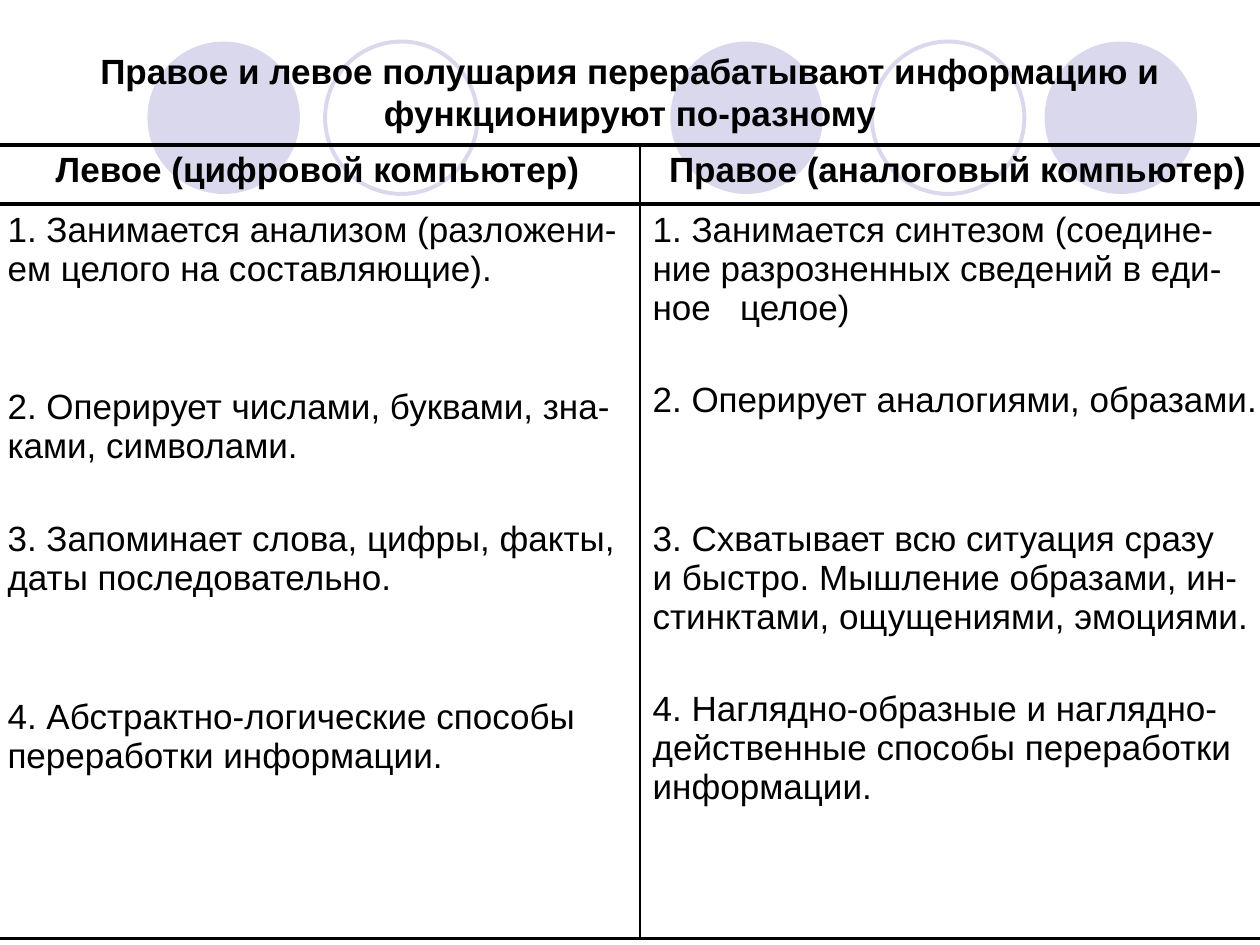
from dataclasses import dataclass

from lxml.etree import SubElement
from pptx import Presentation
from pptx.dml.color import RGBColor
from pptx.enum.shapes import MSO_SHAPE
from pptx.enum.text import MSO_ANCHOR, PP_ALIGN
from pptx.oxml.ns import qn
from pptx.util import Inches, Pt


@dataclass(frozen=True)
class Theme:
    font: str = "Arial"
    text_size: float = 20
    ink: str = "000000"
    circle: str = "D9D8EC"
    circle_line: float = 2.25
    thick_rule: float = 2.25
    thin_rule: float = 1
    paragraph_gap: float = 4
    skipped_line: float = 26.5


THEME = Theme()

TITLE = "Правое и левое полушария перерабатывают информацию и функционируют по-разному"
HEADINGS = ["Левое (цифровой компьютер)", "Правое (аналоговый компьютер)"]
LEFT_POINTS = [
    (0, "1. Занимается анализом (разложени-ем целого на составляющие)."),
    (2, "2. Оперирует числами, буквами, зна-ками, символами."),
    (1, "3. Запоминает слова, цифры, факты, даты последовательно."),
    (2, "4. Абстрактно-логические способы переработки информации."),
]
RIGHT_POINTS = [
    (0, "1. Занимается синтезом (соедине-ние разрозненных сведений в еди-ное   целое)"),
    (1, "2. Оперирует аналогиями, образами."),
    (2, "3. Схватывает всю ситуация сразу\nи быстро. Мышление образами, ин-стинктами, ощущениями, эмоциями."),
    (1, "4. Наглядно-образные и наглядно- действенные способы переработки информации."),
]
CIRCLES = [(0, True), (1.41, False), (4.15, True), (5.75, False), (7.12, True)]


def add_text(paragraph, text, bold=False):
    for index, line in enumerate(text.split("\n")):
        if index:
            paragraph.add_line_break()
        run = paragraph.add_run()
        run.text = line
        run.font.name = THEME.font
        run.font.size = Pt(THEME.text_size)
        run.font.bold = bold
        run.font.color.rgb = RGBColor.from_string(THEME.ink)


def set_borders(cell, **widths):
    properties = cell._tc.get_or_add_tcPr()
    for position, side in enumerate(("L", "R", "T", "B")):
        line = properties.makeelement(qn(f"a:ln{side}"), {"w": str(Pt(widths[side]))})
        fill = SubElement(line, qn("a:solidFill"))
        SubElement(fill, qn("a:srgbClr"), val=THEME.ink)
        properties.insert(position, line)


def add_circles(slide, left, top, diameter):
    color = RGBColor.from_string(THEME.circle)
    for offset, filled in CIRCLES:
        circle = slide.shapes.add_shape(
            MSO_SHAPE.OVAL, left + Inches(offset), top, diameter, diameter)
        circle.shadow.inherit = False
        if filled:
            circle.fill.solid()
            circle.fill.fore_color.rgb = color
            circle.line.fill.background()
        else:
            circle.fill.background()
            circle.line.color.rgb = color
            circle.line.width = Pt(THEME.circle_line)


def place_title(slide, left, top, width, height):
    title = slide.shapes.title
    title.left, title.top, title.width, title.height = left, top, width, height
    frame = title.text_frame
    frame.word_wrap = True
    frame.vertical_anchor = MSO_ANCHOR.MIDDLE
    paragraph = frame.paragraphs[0]
    paragraph.alignment = PP_ALIGN.CENTER
    add_text(paragraph, TITLE, bold=True)
    title._element.getparent().append(title._element)


def fill_points(cell, points):
    frame = cell.text_frame
    for index, (skipped, text) in enumerate(points):
        paragraph = frame.add_paragraph() if index else frame.paragraphs[0]
        if index:
            paragraph.space_before = Pt(THEME.paragraph_gap + skipped * THEME.skipped_line)
        add_text(paragraph, text)


def add_comparison(slide, left, top, columns, rows):
    table = slide.shapes.add_table(
        len(rows), len(columns), left, top, sum(columns), sum(rows)).table
    table.first_row = False
    table.horz_banding = False
    for column, width in zip(table.columns, columns):
        column.width = width
    for row, height in zip(table.rows, rows):
        row.height = height
    for index, (heading, points) in enumerate(zip(HEADINGS, (LEFT_POINTS, RIGHT_POINTS))):
        paragraph = table.cell(0, index).text_frame.paragraphs[0]
        paragraph.alignment = PP_ALIGN.CENTER
        add_text(paragraph, heading, bold=True)
        fill_points(table.cell(1, index), points)
        for row in range(len(rows)):
            cell = table.cell(row, index)
            cell.fill.background()
            set_borders(
                cell,
                L=THEME.thin_rule if index else THEME.thick_rule,
                R=THEME.thick_rule if index else THEME.thin_rule,
                T=THEME.thick_rule,
                B=THEME.thick_rule,
            )


def main():
    presentation = Presentation()
    presentation.slide_width = Inches(10)
    presentation.slide_height = Inches(7.5)
    slide = presentation.slides.add_slide(presentation.slide_layouts[5])
    add_circles(slide, Inches(1.17), Inches(0.33), Inches(1.21))
    place_title(slide, Inches(0.5), Inches(0.3), Inches(9), Inches(0.85))
    add_comparison(
        slide, Inches(-0.04), Inches(1.15),
        columns=[Inches(5.12), Inches(5.04)], rows=[Inches(0.47), Inches(5.83)])
    presentation.save("out.pptx")


if __name__ == "__main__":
    main()
